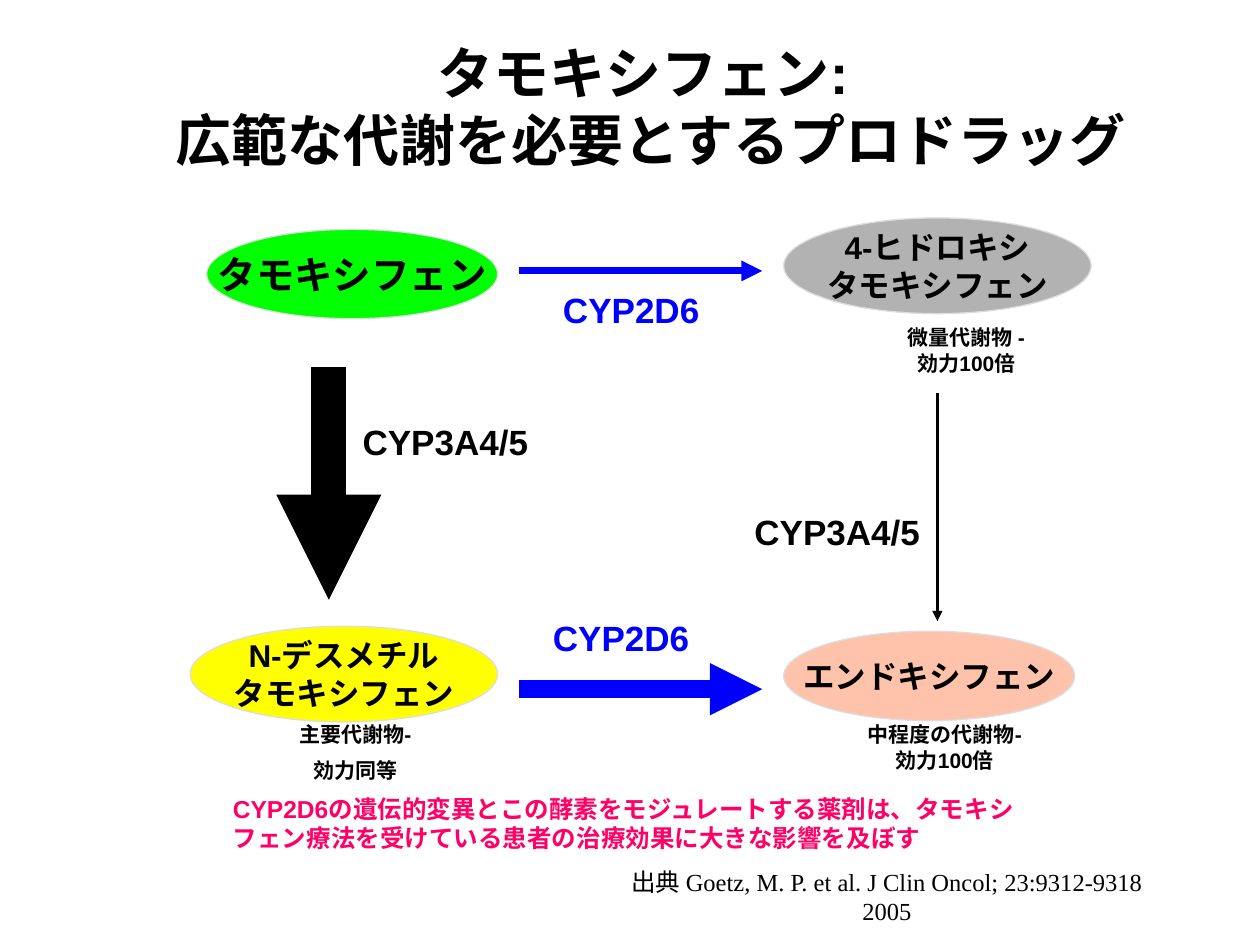
from dataclasses import dataclass

from lxml import etree
from pptx import Presentation
from pptx.dml.color import RGBColor
from pptx.enum.shapes import MSO_CONNECTOR as Connector, MSO_SHAPE as Shape
from pptx.enum.text import MSO_ANCHOR as Anchor, MSO_AUTO_SIZE as AutoSize, PP_ALIGN as Align
from pptx.oxml.ns import qn
from pptx.util import Inches, Pt


@dataclass(frozen=True)
class Theme:
    sans: str = "Arial"
    serif: str = "Times New Roman"
    black: str = "000000"
    blue: str = "0000FF"
    pink: str = "FF0066"
    green: str = "00FF00"
    yellow: str = "FFFF00"
    grey: str = "B2B2B2"
    salmon: str = "FFC2AA"
    outline: str = "DDDDDD"
    title: int = 32
    parent_drug: int = 22
    enzyme: int = 20
    compound: int = 18
    body: int = 14
    note: int = 12


THEME = Theme()


def rgb(value):
    return RGBColor.from_string(value)


def write(frame, text, size, color=THEME.black, font=THEME.sans, bold=True,
          align=Align.CENTER, gap=0):
    """Fill a text frame and format every run in it."""
    frame.text = text
    for index, para in enumerate(frame.paragraphs):
        para.alignment = align
        para.space_before = Pt(gap if index else 0)
        for span in para.runs:
            span.font.name = font
            span.font.size = Pt(size)
            span.font.bold = bold
            span.font.color.rgb = rgb(color)


def add_title(page, text):
    title = page.shapes.title
    title.left, title.top = Inches(0.5), Inches(0.17)
    title.width, title.height = Inches(9.33), Inches(1.33)
    frame = title.text_frame
    frame.auto_size = AutoSize.NONE
    frame.vertical_anchor = Anchor.MIDDLE
    write(frame, text, THEME.title)


def add_text(page, left, top, width, height, text, size, wrap=True, **style):
    box = page.shapes.add_textbox(Inches(left), Inches(top), Inches(width), Inches(height))
    box.text_frame.word_wrap = wrap
    write(box.text_frame, text, size, **style)
    return box


def add_compound(page, left, top, width, height, text, fill, size=THEME.compound):
    oval = page.shapes.add_shape(Shape.OVAL, Inches(left), Inches(top),
                                 Inches(width), Inches(height))
    oval.shadow.inherit = False
    oval.fill.solid()
    oval.fill.fore_color.rgb = rgb(fill)
    oval.line.color.rgb = rgb(THEME.outline)
    oval.line.width = Pt(0.75)
    oval.text_frame.word_wrap = False
    oval.text_frame.vertical_anchor = Anchor.MIDDLE
    write(oval.text_frame, text, size)


def add_arrow(page, start, end, weight, color):
    arrow = page.shapes.add_connector(Connector.STRAIGHT, *map(Inches, start + end))
    arrow.line.color.rgb = rgb(color)
    arrow.line.width = Pt(weight)
    etree.SubElement(arrow.line._get_or_add_ln(), qn("a:tailEnd"), type="triangle")
    etree.SubElement(arrow._element.spPr, qn("a:effectLst"))


def main():
    deck = Presentation()
    deck.slide_width, deck.slide_height = Inches(10), Inches(7.5)
    page = deck.slides.add_slide(deck.slide_layouts[5])
    add_title(page, "タモキシフェン: \v広範な代謝を必要とするプロドラッグ")

    # Compounds
    add_compound(page, 1.64, 1.82, 2.31, 0.71, "タモキシフェン", THEME.green, THEME.parent_drug)
    add_compound(page, 1.51, 4.97, 2.44, 0.76, "N-デスメチル\nタモキシフェン", THEME.yellow)
    add_compound(page, 6.22, 1.73, 2.44, 0.76, "4-ヒドロキシ\nタモキシフェン", THEME.grey)
    add_compound(page, 6.22, 5.01, 2.31, 0.71, "エンドキシフェン", THEME.salmon)

    # Pathways, weighted by their share of the metabolism
    for start, end, weight, color in (
        ((2.61, 2.91), (2.61, 4.76), 20, THEME.black),
        ((7.44, 3.12), (7.44, 4.93), 1.5, THEME.black),
        ((4.12, 2.15), (6.05, 2.15), 4, THEME.blue),
        ((4.12, 5.47), (6.05, 5.47), 10, THEME.blue),
    ):
        add_arrow(page, start, end, weight, color)

    # Enzymes
    for left, top, width, name, color in (
        (2.77, 3.29, 1.53, "CYP3A4/5", THEME.black),
        (5.88, 4, 1.53, "CYP3A4/5", THEME.black),
        (4.36, 2.24, 1.3, "CYP2D6", THEME.blue),
        (4.28, 4.84, 1.3, "CYP2D6", THEME.blue),
    ):
        add_text(page, left, top, width, 0.44, name, THEME.enzyme, wrap=False, color=color)

    # Metabolite notes
    add_text(page, 1.77, 5.68, 2.1, 0.61, "主要代謝物-\n効力同等", THEME.note, gap=6)
    add_text(page, 6.22, 2.53, 2.9, 0.5, "微量代謝物 -\n効力100倍", THEME.note)
    add_text(page, 6.22, 5.68, 2.56, 0.5, "中程度の代謝物-\n効力100倍", THEME.note)

    # Conclusion and citation
    add_text(page, 1.75, 6.25, 6.42, 0.57,
             "CYP2D6の遺伝的変異とこの酵素をモジュレートする薬剤は、"
             "タモキシフェン療法を受けている患者の治療効果に大きな影響を及ぼす",
             THEME.body, color=THEME.pink, align=Align.LEFT)
    citation = add_text(page, 4.67, 6.83, 4.74, 0.34,
                        "出典 Goetz, M. P. et al. J Clin Oncol; 23:9312-9318 2005",
                        THEME.body, font=THEME.serif, bold=False)
    citation.text_frame.margin_left = citation.text_frame.margin_right = Inches(0.2)

    deck.save("out.pptx")


if __name__ == "__main__":
    main()
